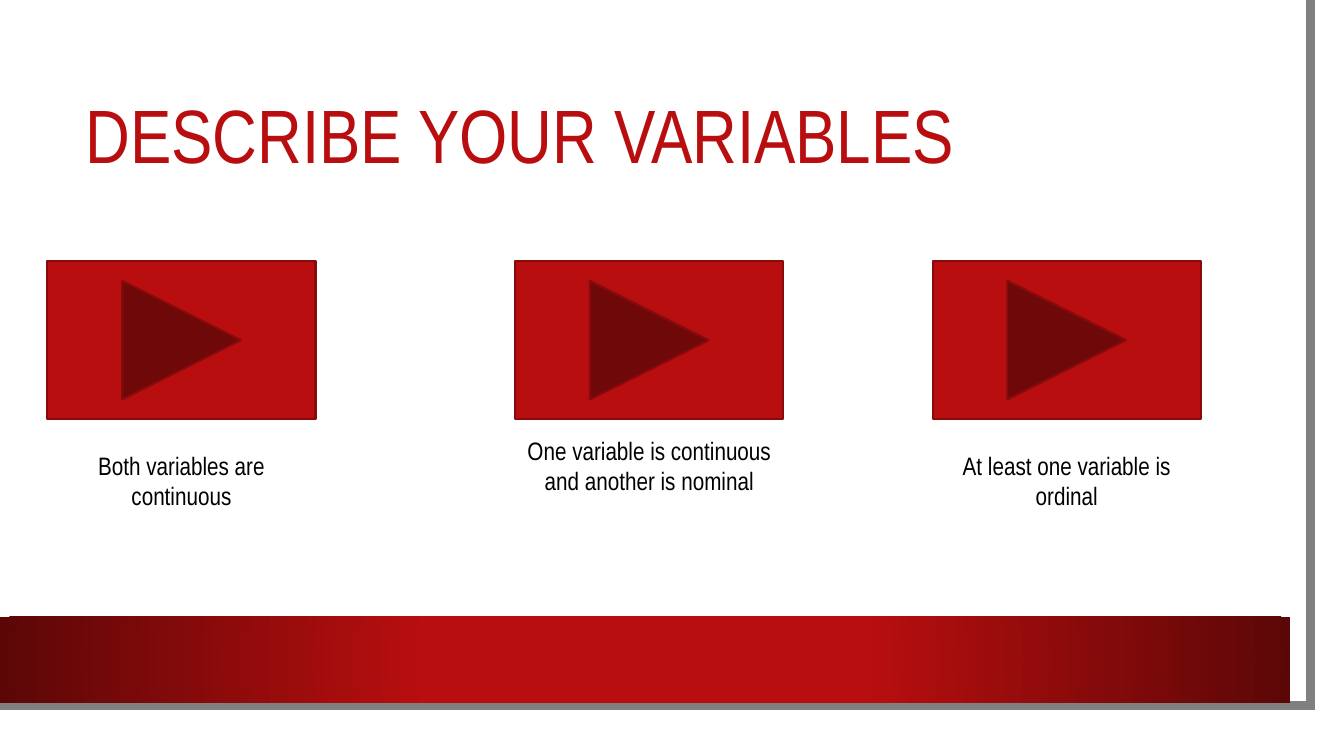
from lxml import etree
from pptx import Presentation
from pptx.dml.color import RGBColor
from pptx.enum.shapes import MSO_SHAPE
from pptx.enum.text import MSO_ANCHOR, MSO_AUTO_SIZE, PP_ALIGN
from pptx.oxml import parse_xml
from pptx.oxml.ns import qn
from pptx.util import Inches, Pt

RECTANGLE = MSO_SHAPE.RECTANGLE
NEXT_BUTTON = MSO_SHAPE.ACTION_BUTTON_FORWARD_OR_NEXT
MIDDLE, TOP = MSO_ANCHOR.MIDDLE, MSO_ANCHOR.TOP
LEFT, CENTER = PP_ALIGN.LEFT, PP_ALIGN.CENTER
FIT_TEXT, FIXED = MSO_AUTO_SIZE.SHAPE_TO_FIT_TEXT, MSO_AUTO_SIZE.NONE

WHITE, BLACK, GRAY = "FFFFFF", "000000", "808080"
RED, DARK_RED, DEEP_RED = "B80E0F", "880A0B", "5C0707"


def color(hex_code):
    return RGBColor.from_string(hex_code)


def add_text(text, left, top, width, height, size, hex_code, align, anchor, fit):
    box = slide.shapes.add_textbox(Inches(left), Inches(top), Inches(width), Inches(height))
    frame = box.text_frame
    frame.word_wrap = True
    frame.auto_size = fit
    frame.vertical_anchor = anchor
    paragraph = frame.paragraphs[0]
    paragraph.text = text
    paragraph.alignment = align
    paragraph.font.name = "Arial Narrow"
    paragraph.font.size = Pt(size)
    paragraph.font.color.rgb = color(hex_code)
    return paragraph


prs = Presentation()
prs.slide_width, prs.slide_height = Inches(13.33), Inches(7.5)
slide = prs.slides.add_slide(prs.slide_layouts[6])

# White page with a gray edge on the right and bottom
page = slide.shapes.add_shape(RECTANGLE, 0, 0, Inches(13.1), Inches(7.27))
page.shadow.inherit = False
page.fill.solid()
page.fill.fore_color.rgb = color(WHITE)
page.line.fill.background()

outline = slide.shapes.build_freeform(12.82, 0, scale=Inches(1))
outline.add_line_segments([(12.85, 7.02), (-0.03, 7.01)], close=False)
edge = outline.convert_to_shape()
edge.shadow.inherit = False
edge.fill.background()
edge.line.color.rgb = color(GRAY)
edge.line.width = Pt(6.5)
etree.SubElement(edge.line._get_or_add_ln(), qn("a:miter"), lim="800000")

# Footer band, bright in the middle and dark at both ends
band = slide.shapes.add_shape(RECTANGLE, 0, Inches(6.12), Inches(12.8), Inches(0.85))
band.shadow.inherit = False
band.line.fill.background()
band.fill.gradient()
gradient = band.fill._xPr.find(qn("a:gradFill"))
gradient.getparent().replace(gradient, parse_xml(
    '<a:gradFill xmlns:a="http://schemas.openxmlformats.org/drawingml/2006/main">'
    f'<a:gsLst><a:gs pos="34000"><a:srgbClr val="{RED}"/></a:gs>'
    f'<a:gs pos="100000"><a:srgbClr val="{DEEP_RED}"/></a:gs></a:gsLst>'
    '<a:path path="circle"><a:fillToRect l="50000" t="50000" r="50000" b="50000"/></a:path>'
    '</a:gradFill>'))

title = add_text("DESCRIBE YOUR VARIABLES", 0.75, 0.75, 11.37, 1.26, 54, RED, LEFT, MIDDLE, FIXED)
title.line_spacing = 0.9

# One button with a caption for each kind of variable pair
choices = [
    (0.47, 4.42, 0.71, "Both variables are continuous"),
    (5.11, 4.27, 1.01, "One variable is continuous and another is nominal"),
    (9.25, 4.42, 0.71, "At least one variable is ordinal"),
]
CHOICE_WIDTH = 2.66
for left, caption_top, caption_height, caption in choices:
    button = slide.shapes.add_shape(
        NEXT_BUTTON, Inches(left), Inches(2.59), Inches(CHOICE_WIDTH), Inches(1.57))
    button.shadow.inherit = False
    button.fill.solid()
    button.fill.fore_color.rgb = color(RED)
    button.line.color.rgb = color(DARK_RED)
    button.line.width = Pt(1.5)
    add_text(caption, left, caption_top, CHOICE_WIDTH, caption_height,
             18, BLACK, CENTER, TOP, FIT_TEXT)

prs.save("out.pptx")
